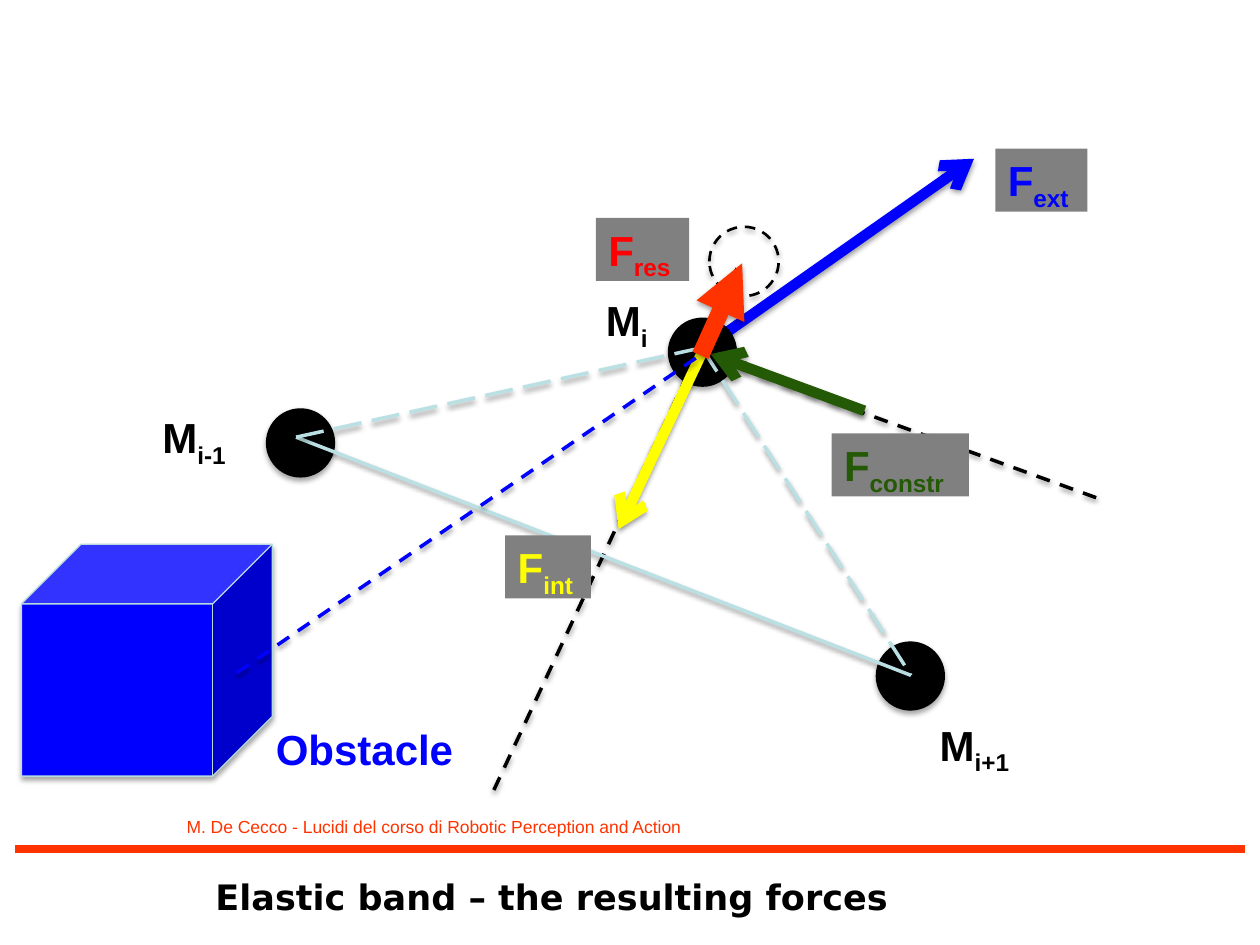
from lxml.etree import SubElement
from pptx import Presentation
from pptx.dml.color import RGBColor
from pptx.enum.dml import MSO_LINE
from pptx.enum.shapes import MSO_CONNECTOR, MSO_SHAPE
from pptx.enum.text import MSO_ANCHOR, MSO_AUTO_SIZE, PP_ALIGN
from pptx.oxml.ns import qn
from pptx.util import Inches, Pt

BLACK = RGBColor(0x00, 0x00, 0x00)
BLUE = RGBColor(0x00, 0x00, 0xFF)
RED = RGBColor(0xFF, 0x00, 0x00)
ORANGE = RGBColor(0xFF, 0x33, 0x00)
YELLOW = RGBColor(0xFF, 0xFF, 0x00)
GREEN = RGBColor(0x24, 0x59, 0x05)
GRAY = RGBColor(0x80, 0x80, 0x80)
BAND = RGBColor(0xBB, 0xE0, 0xE3)
EDGE = RGBColor(0xB6, 0xDC, 0xDF)
NODE_SIZE = 0.55
LABEL_HEIGHT = 0.5


def set_shadow(shape, alpha, distance):
    effects = SubElement(shape._element.spPr, qn("a:effectLst"))
    if alpha:
        outer = SubElement(effects, qn("a:outerShdw"), blurRad=str(Pt(3.1)),
                           dist=str(Pt(distance)), dir="5400000", rotWithShape="0")
        color = SubElement(outer, qn("a:srgbClr"), val="000000")
        SubElement(color, qn("a:alpha"), val=str(alpha * 1000))


def add_line(s, start, end, color, width, dash=None, head=None, shadow=True):
    line = s.shapes.add_connector(MSO_CONNECTOR.STRAIGHT,
                                  *[Inches(v) for v in (*start, *end)])
    line.line.color.rgb = color
    line.line.width = Pt(width)
    if dash:
        line.line.dash_style = dash
    if head:
        SubElement(line.line._get_or_add_ln(), qn("a:tailEnd"), type=head)
    set_shadow(line, 38 if shadow else 0, 1.6)


def add_solid(s, kind, left, top, width, height, fill=None, line=None,
              line_width=0.75, dash=None, adj=None):
    shape = s.shapes.add_shape(kind, *[Inches(v) for v in (left, top, width, height)])
    if adj:
        shape.adjustments[0] = adj
    if fill is None:
        shape.fill.background()
    else:
        shape.fill.solid()
        shape.fill.fore_color.rgb = fill
    if line is None:
        shape.line.fill.background()
    else:
        shape.line.color.rgb = line
        shape.line.width = Pt(line_width)
        if dash:
            shape.line.dash_style = dash
    set_shadow(shape, 35, 1.8)


def add_circle(s, left, top, **style):
    add_solid(s, MSO_SHAPE.OVAL, left, top, NODE_SIZE, NODE_SIZE, **style)


def write_text(shape, text, sub="", size=24, font="Arial", color=BLACK,
               bold=True, align=PP_ALIGN.LEFT, wrap=False):
    tf = shape.text_frame
    tf.word_wrap = wrap
    tf.auto_size = MSO_AUTO_SIZE.SHAPE_TO_FIT_TEXT
    tf.vertical_anchor = MSO_ANCHOR.TOP
    p = tf.paragraphs[0]
    p.alignment = align
    for part in filter(None, (text, sub)):
        r = p.add_run()
        r.text = part
        r.font.size = Pt(size)
        r.font.name = font
        r.font.bold = bold
        r.font.color.rgb = color
        if part == sub:
            r._r.get_or_add_rPr().set("baseline", "-25000")


def add_label(s, left, top, width, text, sub="", height=LABEL_HEIGHT, fill=None, **style):
    box = s.shapes.add_textbox(*[Inches(v) for v in (left, top, width, height)])
    if fill is not None:
        box.fill.solid()
        box.fill.fore_color.rgb = fill
    write_text(box, text, sub, **style)


def add_title(s, text):
    title = s.shapes.title
    title.left, title.top, title.width, title.height = [
        Inches(v) for v in (1.14 + 0.47, 6.9, 5.59, 0.44)]
    write_text(title, text, size=20, font="DejaVu Sans")


def main():
    prs = Presentation()
    prs.slide_width, prs.slide_height = Inches(10), Inches(7.5)
    s = prs.slides.add_slide(prs.slide_layouts[5])

    add_title(s, "Elastic band – the resulting forces")
    add_line(s, (0.12, 6.74), (9.88, 6.74), ORANGE, 4.5, shadow=False)
    add_label(s, 1.14, 6.43, 4.36, "M. De Cecco - Lucidi del corso di Robotic Perception and Action",
              height=0.27, size=10, color=ORANGE, bold=False, align=PP_ALIGN.RIGHT, wrap=True)

    add_line(s, (5.55, 2.79), (7.73, 1.26), BLUE, 6, head="arrow")
    for left, top in ((2.11, 3.24), (6.95, 5.09), (5.3, 2.52)):
        add_circle(s, left, top, fill=BLACK)

    previous, current, following = (2.35, 3.47), (5.57, 2.76), (7.23, 5.36)
    add_line(s, (3.92, 6.27), (5.85, 2.13), BLACK, 2, MSO_LINE.DASH)
    add_line(s, previous, following, BAND, 2)
    add_line(s, (8.7, 3.95), (5.57, 2.81), BLACK, 2, MSO_LINE.DASH)
    add_line(s, previous, current, BAND, 2, MSO_LINE.LONG_DASH)
    add_line(s, current, following, BAND, 2, MSO_LINE.LONG_DASH)
    add_line(s, (5.59, 2.76), (4.91, 4.2), YELLOW, 6, head="arrow")
    add_line(s, (6.86, 3.26), (5.64, 2.81), GREEN, 6, head="arrow")

    for left, top, width, sub, color in (
            (4.01, 4.25, 0.68, "int", YELLOW),
            (7.9, 1.18, 0.73, "ext", BLUE),
            (4.73, 1.73, 0.74, "res", RED),
            (6.6, 3.44, 1.09, "constr", GREEN)):
        add_label(s, left, top, width, "F", sub, fill=GRAY, color=color)
    for left, top, width, sub in (
            (1.19, 3.22, 0.75, "i-1"),
            (7.36, 5.66, 0.8, "i+1"),
            (4.71, 2.29, 0.55, "i")):
        add_label(s, left, top, width, "M", sub)

    add_solid(s, MSO_SHAPE.CUBE, 0.17, 4.32, 1.99, 1.84, fill=BLUE, line=EDGE, adj=0.257)
    add_label(s, 2.09, 5.69, 1.62, "Obstacle", color=BLUE)
    add_line(s, (1.88, 5.34), (5.54, 2.83), BLUE, 2, MSO_LINE.DASH)
    add_circle(s, 5.63, 1.8, line=BLACK, line_width=1.5, dash=MSO_LINE.DASH)
    add_line(s, (5.56, 2.82), (5.89, 2.09), ORANGE, 10, head="triangle")

    prs.save("out.pptx")


if __name__ == "__main__":
    main()
